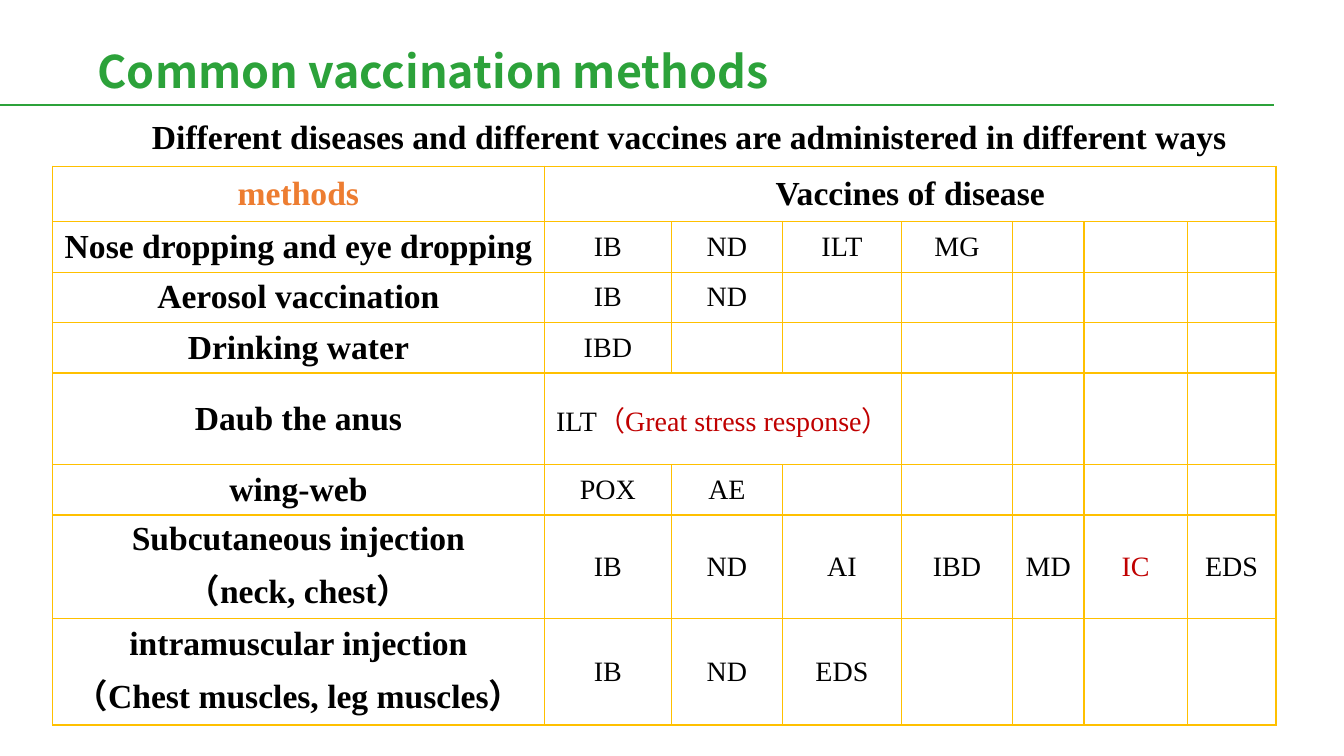
from dataclasses import dataclass

from lxml import etree
from pptx import Presentation
from pptx.dml.color import RGBColor
from pptx.enum.shapes import MSO_CONNECTOR
from pptx.enum.text import MSO_ANCHOR, PP_ALIGN
from pptx.oxml.ns import qn
from pptx.util import Cm, Pt

LEFT, CENTER = PP_ALIGN.LEFT, PP_ALIGN.CENTER
MIDDLE = MSO_ANCHOR.MIDDLE
STRAIGHT = MSO_CONNECTOR.STRAIGHT


@dataclass(frozen=True)
class Theme:
    green: str = "2CA23A"
    orange: str = "ED7D31"
    red: str = "C00000"
    black: str = "000000"
    white: str = "FFFFFF"
    gold: str = "FFC000"
    serif: str = "Times New Roman"
    sans: str = "Noto Sans CJK SC"
    title: int = 32
    label: int = 24
    code: int = 20


THEME = Theme()


@dataclass(frozen=True)
class Run:
    text: str
    color: str = THEME.black


@dataclass(frozen=True)
class Row:
    height: float
    method: str
    codes: tuple
    span: int = 1


WIDTHS = (12.4, 3.2, 2.8, 3, 2.8, 1.8, 2.6, 2.24)
HEAD = 1.4
ROWS = (
    Row(1.27, "Nose dropping and eye dropping", ("IB", "ND", "ILT", "MG")),
    Row(1.27, "Aerosol vaccination", ("IB", "ND")),
    Row(1.27, "Drinking water", ("IBD",)),
    Row(2.31, "Daub the anus",
        ((Run("ILT"), Run("（Great stress response）", THEME.red)),), span=3),
    Row(1.27, "wing-web", ("POX", "AE")),
    Row(2.6, "Subcutaneous injection\n（neck, chest）",
        ("IB", "ND", "AI", "IBD", "MD", (Run("IC", THEME.red),), "EDS")),
    Row(2.69, "intramuscular injection\n（Chest muscles, leg muscles）",
        ("IB", "ND", "EDS")),
)


def write(frame, text, *, size: int, color: str = THEME.black, bold: bool = True,
          font: str = THEME.serif, align=CENTER, leading: float = 1.0) -> None:
    """Fill a frame with lines of text, or with one line of coloured runs."""
    if isinstance(text, str):
        lines = [(Run(line, color),) for line in text.split("\n")]
    else:
        lines = [text]
    for index, line in enumerate(lines):
        para = frame.add_paragraph() if index else frame.paragraphs[0]
        para.alignment = align
        para.line_spacing = leading
        if index:
            para.space_before = Pt(size * 0.2)
        for part in line:
            run = para.add_run()
            run.text = part.text
            run.font.size = Pt(size)
            run.font.bold = bold
            run.font.name = font
            run.font.color.rgb = RGBColor.from_string(part.color)


def add_text(slide, box: tuple, text: str, **style) -> None:
    """Add a wrapped text box."""
    frame = slide.shapes.add_textbox(*map(Cm, box)).text_frame
    frame.word_wrap = True
    write(frame, text, align=LEFT, **style)


def add_rule(slide) -> None:
    """Draw the green line below the title."""
    rule = slide.shapes.add_connector(STRAIGHT, Cm(0), Cm(2.64), Cm(32.1), Cm(2.64))
    rule.line.color.rgb = RGBColor.from_string(THEME.green)
    rule.line.width = Pt(1.5)
    etree.SubElement(rule._element.spPr, qn("a:effectLst"))


def dress(cell) -> None:
    """Give a cell gold borders, a white fill and centred text."""
    props = cell._tc.get_or_add_tcPr()
    for side in ("lnL", "lnR", "lnT", "lnB"):
        line = etree.SubElement(props, qn(f"a:{side}"), w=str(Pt(1)))
        fill = etree.SubElement(line, qn("a:solidFill"))
        etree.SubElement(fill, qn("a:srgbClr"), val=THEME.gold)
    cell.fill.solid()
    cell.fill.fore_color.rgb = RGBColor.from_string(THEME.white)
    cell.vertical_anchor = MIDDLE


def add_grid(slide) -> None:
    """Add the table of methods and vaccines."""
    heights = [HEAD] + [row.height for row in ROWS]
    table = slide.shapes.add_table(
        len(heights), len(WIDTHS), Cm(1.32), Cm(4.19),
        Cm(sum(WIDTHS)), Cm(sum(heights))).table
    table.first_row = table.horz_banding = False
    for column, width in zip(table.columns, WIDTHS):
        column.width = Cm(width)
    for line, height in zip(table.rows, heights):
        line.height = Cm(height)
    for cell in table.iter_cells():
        dress(cell)

    table.cell(0, 1).merge(table.cell(0, len(WIDTHS) - 1))
    write(table.cell(0, 0).text_frame, "methods", size=THEME.label, color=THEME.orange)
    write(table.cell(0, 1).text_frame, "Vaccines of disease", size=THEME.label)
    for index, row in enumerate(ROWS, 1):
        write(table.cell(index, 0).text_frame, row.method, size=THEME.label)
        if row.span > 1:
            table.cell(index, 1).merge(table.cell(index, row.span))
        for place, code in enumerate(row.codes, 1):
            write(table.cell(index, place).text_frame, code, size=THEME.code, bold=False)


def main() -> None:
    """Build and save the slide."""
    deck = Presentation()
    deck.slide_width, deck.slide_height = Cm(33.87), Cm(19.05)
    slide = deck.slides.add_slide(deck.slide_layouts[6])
    add_rule(slide)
    add_grid(slide)
    add_text(slide, (2.21, 1.12, 21.34, 1.5), "Common vaccination methods",
             size=THEME.title, color=THEME.green, font=THEME.sans, leading=0.9)
    add_text(slide, (3.58, 2.79, 27.89, 1.27),
             "Different diseases and different vaccines are administered in different ways",
             size=THEME.label)
    deck.save("out.pptx")


if __name__ == "__main__":
    main()
